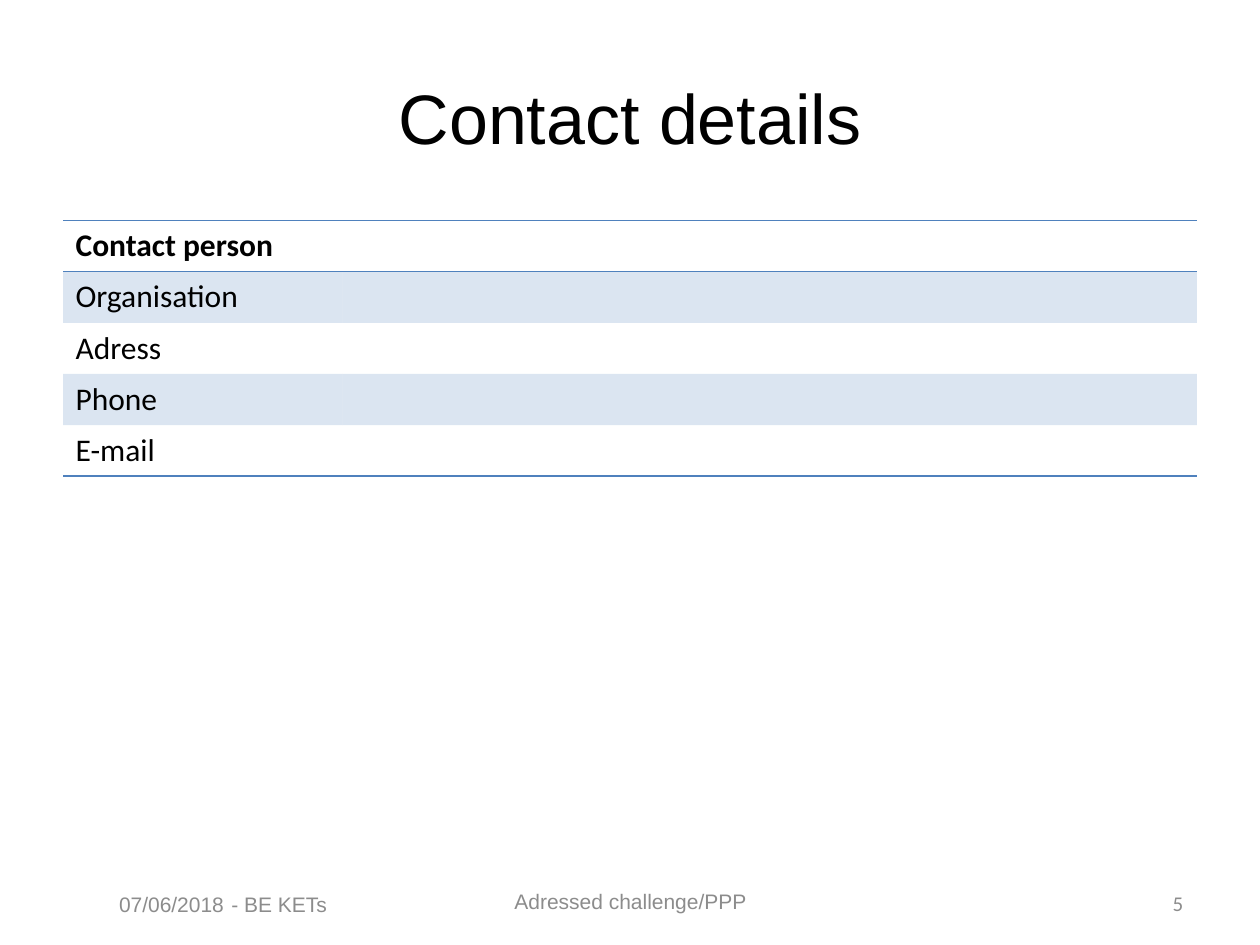
import dataclasses
import typing

import lxml.etree
import pptx
import pptx.dml.color
import pptx.enum.text
import pptx.oxml
import pptx.oxml.ns
import pptx.util

Inches = pptx.util.Inches
ALIGN = pptx.enum.text.PP_ALIGN
NO_STYLE = "{2D5ABB26-0587-4C30-8999-92F81FD0307C}"


@dataclasses.dataclass(frozen=True)
class Theme:
    ink: str = "000000"
    muted: str = "8C8C8C"
    accent: str = "4F81BD"
    band_alpha: int = 20
    rule_pt: float = 1
    title_pt: int = 40
    body_pt: int = 18
    footer_pt: int = 12
    heading_font: str = "Arial"
    body_font: str = "Calibri"


THEME = Theme()


@dataclasses.dataclass(frozen=True)
class Run:
    text: str
    size: int = THEME.footer_pt
    font: str = THEME.heading_font
    color: str = THEME.muted
    bold: bool = False


@dataclasses.dataclass(frozen=True)
class Label:
    left: float
    top: float
    width: float
    height: float
    align: ALIGN
    runs: tuple[Run, ...]


LABELS = (
    Label(0.55, 6.94, 2.44, 0.4, ALIGN.CENTER, (
        Run("07/06/2018"),
        Run(" ", THEME.body_pt, THEME.body_font, THEME.ink),
        Run("- BE KETs"),
    )),
    Label(7.05, 7.02, 2.44, 0.3, ALIGN.RIGHT, (Run("5", font=THEME.body_font),)),
    Label(0.5, 0.3, 9, 1.25, ALIGN.CENTER,
          (Run("Contact details", THEME.title_pt, color=THEME.ink),)),
    Label(3.42, 6.95, 3.17, 0.4, ALIGN.CENTER, (Run("Adressed challenge/PPP"),)),
)
FIELDS = ("Contact person", "Organisation", "Adress", "Phone", "E-mail")
COLUMN_WIDTHS = (2.22, 6.78)
ROW_HEIGHT = 0.406


def add_run(p: typing.Any, run: Run) -> None:
    r = p.add_run()
    r.text = run.text
    formats = {"size": pptx.util.Pt(run.size), "name": run.font, "bold": run.bold}
    for name, value in formats.items():
        setattr(r.font, name, value)
    r.font.color.rgb = pptx.dml.color.RGBColor.from_string(run.color)


def add_label(slide: typing.Any, label: Label) -> None:
    box = (label.left, label.top, label.width, label.height)
    tf = slide.shapes.add_textbox(*map(Inches, box)).text_frame
    formats = {"word_wrap": True, "vertical_anchor": pptx.enum.text.MSO_ANCHOR.MIDDLE}
    for name, value in formats.items():
        setattr(tf, name, value)
    p = tf.paragraphs[0]
    p.alignment = label.align
    for run in label.runs:
        add_run(p, run)


def add_border(cell: typing.Any, side: str) -> None:
    cell._tc.get_or_add_tcPr().append(pptx.oxml.parse_xml(
        f'<a:{side} {pptx.oxml.ns.nsdecls("a")} w="{pptx.util.Pt(THEME.rule_pt)}">'
        f'<a:solidFill><a:srgbClr val="{THEME.accent}"/></a:solidFill></a:{side}>'
    ))


def fill_band(cell: typing.Any) -> None:
    cell.fill.solid()
    cell.fill.fore_color.rgb = pptx.dml.color.RGBColor.from_string(THEME.accent)
    color = cell._tc.tcPr.find(".//" + pptx.oxml.ns.qn("a:solidFill") + "/"
                               + pptx.oxml.ns.qn("a:srgbClr"))
    lxml.etree.SubElement(color, pptx.oxml.ns.qn("a:alpha"),
                          val=str(THEME.band_alpha * 1000))


def add_contact_table(slide: typing.Any) -> None:
    rows = len(FIELDS)
    table = slide.shapes.add_table(
        rows, len(COLUMN_WIDTHS), Inches(0.5), Inches(1.75),
        Inches(sum(COLUMN_WIDTHS)), Inches(ROW_HEIGHT * rows)).table
    table._tbl.tblPr.find(pptx.oxml.ns.qn("a:tableStyleId")).text = NO_STYLE
    table.horz_banding = False
    for column, width in zip(table.columns, COLUMN_WIDTHS):
        column.width = Inches(width)
    for i, field in enumerate(FIELDS):
        table.rows[i].height = Inches(ROW_HEIGHT)
        for cell in table.rows[i].cells:
            if i == 0:
                add_border(cell, "lnT")
            if i in (0, rows - 1):
                add_border(cell, "lnB")
            if i % 2:
                fill_band(cell)
            else:
                cell.fill.background()
        add_run(table.cell(i, 0).text_frame.paragraphs[0],
                Run(field, THEME.body_pt, THEME.body_font, THEME.ink, i == 0))


def main() -> None:
    prs = pptx.Presentation()
    prs.slide_width, prs.slide_height = Inches(10), Inches(7.5)
    slide = prs.slides.add_slide(prs.slide_layouts[6])
    for label in LABELS:
        add_label(slide, label)
    add_contact_table(slide)
    prs.save("out.pptx")


if __name__ == "__main__":
    main()
